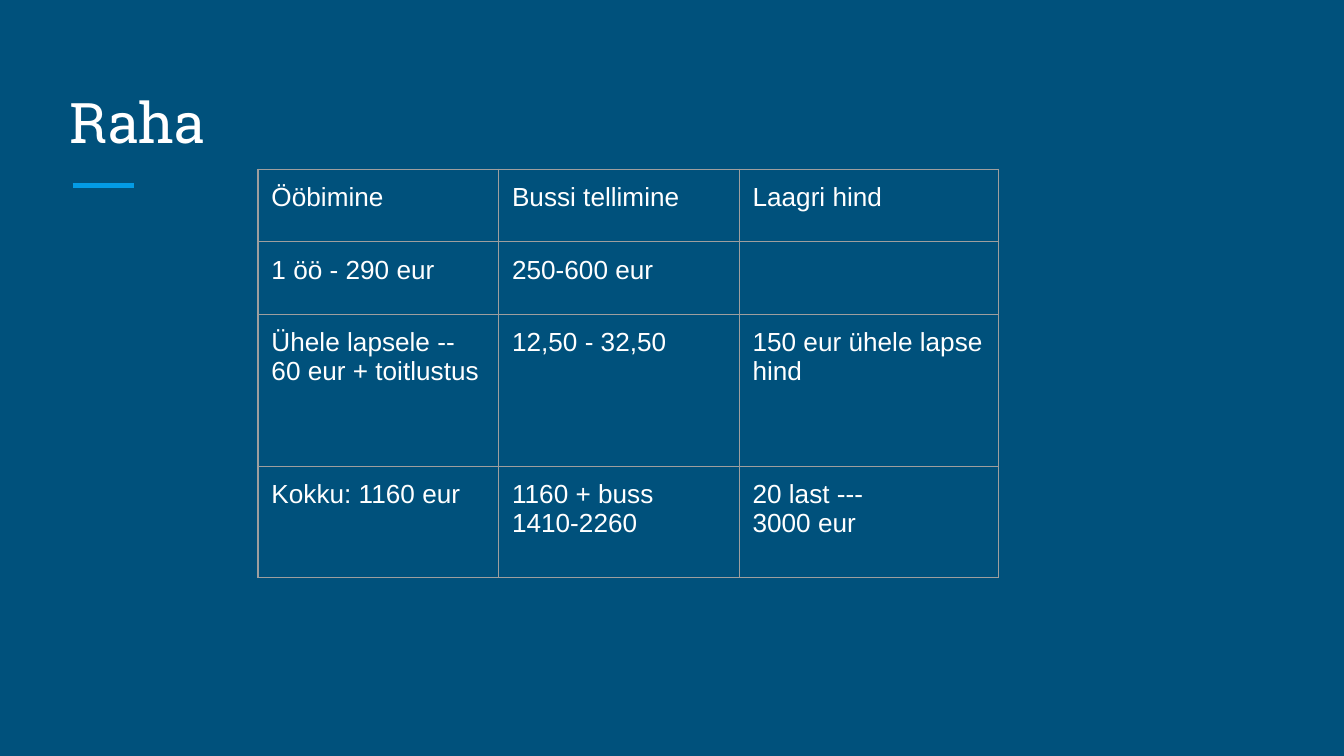
"""Build the camp budget slide with its cost table."""
from lxml import etree
from pptx import Presentation
from pptx.dml.color import RGBColor
from pptx.enum.shapes import MSO_CONNECTOR
from pptx.enum.text import MSO_ANCHOR, MSO_AUTO_SIZE, PP_ALIGN
from pptx.oxml.ns import qn
from pptx.util import Inches, Pt

STRAIGHT = MSO_CONNECTOR.STRAIGHT
BOTTOM, TOP = MSO_ANCHOR.BOTTOM, MSO_ANCHOR.TOP
NO_AUTOFIT = MSO_AUTO_SIZE.NONE
LEFT = PP_ALIGN.LEFT

COLORS = {"bg": "00517C", "accent": "039BE5", "text": "FFFFFF", "border": "9E9E9E"}
HEAD_FONT, BODY_FONT = "Roboto Slab", "Arial"
INSET = Inches(0.1)
WIDTH = 10
HEIGHT = WIDTH * 9 / 16

COLS = [1.79, 1.79, 1.93]
ROWS = [0.54, 0.54, 1.13, 0.83]
COSTS = [
    ["Ööbimine", "Bussi tellimine", "Laagri hind"],
    ["1 öö - 290 eur", "250-600 eur", ""],
    ["Ühele lapsele -- 60 eur + toitlustus", "12,50 - 32,50", "150 eur ühele lapse hind"],
    ["Kokku: 1160 eur", "1160 + buss\n1410-2260", "20 last ---\n3000 eur"],
]


class Deck:
    """Holds the style and the current slide."""

    def __init__(self, prs):
        self.s = prs.slides.add_slide(prs.slide_layouts[5])
        fill = self.s.background.fill
        fill.solid()
        fill.fore_color.rgb = self.color("bg")

    def color(self, name):
        return RGBColor.from_string(COLORS[name])

    def format(self, tf, font, size):
        for p in tf.paragraphs:
            p.alignment = LEFT
            p.font.name = font
            p.font.size = Pt(size)
            p.font.color.rgb = self.color("text")

    def title(self, text, x, y, w, h):
        sp = self.s.shapes.title
        sp.left, sp.top, sp.width, sp.height = map(Inches, (x, y, w, h))
        tf = sp.text_frame
        tf.text = text
        tf.word_wrap = True
        tf.auto_size = NO_AUTOFIT
        tf.vertical_anchor = BOTTOM
        tf.margin_left = tf.margin_right = tf.margin_top = tf.margin_bottom = INSET
        self.format(tf, HEAD_FONT, 30)

    def rule(self, x1, x2, y):
        line = self.s.shapes.add_connector(STRAIGHT, *map(Inches, (x1, y, x2, y)))
        line.line.color.rgb = self.color("accent")
        line.line.width = Pt(3)
        etree.SubElement(line._element.spPr, qn("a:effectLst"))

    def borders(self, cell):
        tc_pr = cell._tc.get_or_add_tcPr()
        for side in ("lnL", "lnR", "lnT", "lnB"):
            ln = etree.SubElement(tc_pr, qn(f"a:{side}"), w=str(Pt(0.75)))
            fill = etree.SubElement(ln, qn("a:solidFill"))
            etree.SubElement(fill, qn("a:srgbClr"), val=COLORS["border"])

    def table(self, x, y, cols, rows, data):
        size = Inches(sum(cols)), Inches(sum(rows))
        table = self.s.shapes.add_table(len(rows), len(cols), Inches(x), Inches(y), *size).table
        table.first_row = table.horz_banding = False
        for col, width in zip(table.columns, cols):
            col.width = Inches(width)
        for row, height, texts in zip(table.rows, rows, data):
            row.height = Inches(height)
            for cell, text in zip(row.cells, texts):
                cell.text = text
                cell.vertical_anchor = TOP
                cell.margin_left = cell.margin_right = INSET
                cell.margin_top = cell.margin_bottom = INSET
                self.borders(cell)
                cell.fill.background()
                self.format(cell.text_frame, BODY_FONT, 14)


def main():
    prs = Presentation()
    prs.slide_width, prs.slide_height = Inches(WIDTH), Inches(HEIGHT)
    deck = Deck(prs)
    deck.rule(0.54, 1, 1.38)
    deck.title("Raha", 0.42, 0.5, 9.15, 0.75)
    deck.table(1.92, 1.26, COLS, ROWS, COSTS)
    prs.save("out.pptx")


if __name__ == "__main__":
    main()
